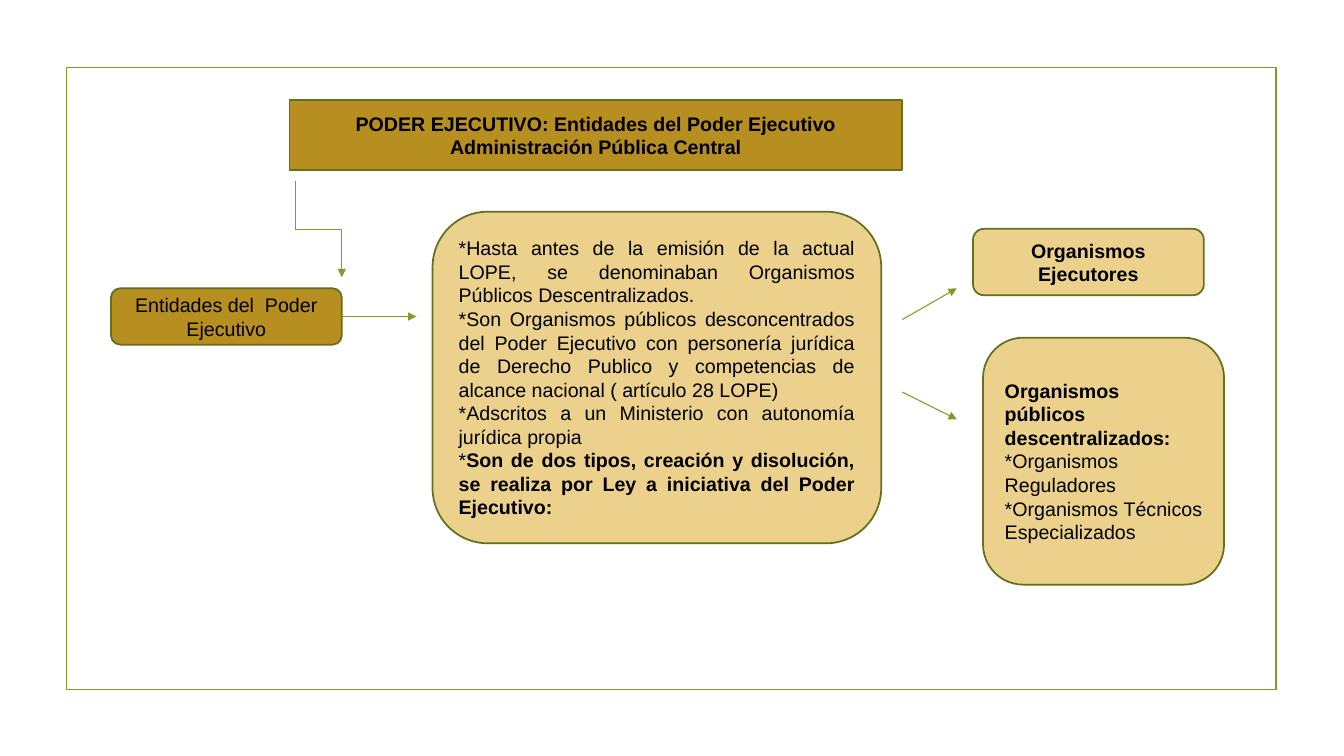
from pptx import Presentation
from pptx.dml.color import RGBColor
from pptx.enum.shapes import MSO_CONNECTOR, MSO_SHAPE
from pptx.enum.text import MSO_ANCHOR, MSO_AUTO_SIZE, PP_ALIGN
from pptx.oxml.ns import qn
from pptx.util import Inches, Pt
from lxml import etree

FRAME_GREEN = RGBColor(0x83, 0x99, 0x2A)
BORDER_GREEN = RGBColor(0x61, 0x71, 0x1F)
GOLD = RGBColor(0xB7, 0x8E, 0x20)
SAND = RGBColor(0xEB, 0xD1, 0x8C)
BLACK = RGBColor(0, 0, 0)
RECTANGLE = MSO_SHAPE.RECTANGLE
ROUNDED = MSO_SHAPE.ROUNDED_RECTANGLE
PROCESS = MSO_SHAPE.FLOWCHART_ALTERNATE_PROCESS
STRAIGHT, ELBOW = MSO_CONNECTOR.STRAIGHT, MSO_CONNECTOR.ELBOW
CENTER, JUSTIFY = PP_ALIGN.CENTER, PP_ALIGN.JUSTIFY
MIDDLE, NO_AUTOFIT = MSO_ANCHOR.MIDDLE, MSO_AUTO_SIZE.NONE
RIGHT_SIDE = 3


class EntityDiagram:
    """Holds the shared style and the slide on which the diagram is drawn."""

    font_format = {"name": "Arial", "size": Pt(14)}
    frame_format = {"word_wrap": True, "auto_size": NO_AUTOFIT, "vertical_anchor": MIDDLE}

    def __init__(self, slide):
        self.slide = slide

    def outline(self, shape, color):
        shape.line.color.rgb = color
        shape.line.width = Pt(1.25)

    def label(self, shape, paragraphs, align):
        text_frame = shape.text_frame
        for key, value in self.frame_format.items():
            setattr(text_frame, key, value)
        for index, runs in enumerate(paragraphs):
            paragraph = text_frame.add_paragraph() if index else text_frame.paragraphs[0]
            paragraph.alignment = align
            for text, bold in runs:
                run = paragraph.add_run()
                run.text = text
                for key, value in {**self.font_format, "bold": bold}.items():
                    setattr(run.font, key, value)
                run.font.color.rgb = BLACK

    def title(self, bounds, text):
        title = self.slide.shapes.title
        for key, value in zip(("left", "top", "width", "height"), bounds):
            setattr(title, key, Inches(value))
        geometry = etree.Element(qn("a:prstGeom"), prst="roundRect")
        etree.SubElement(geometry, qn("a:avLst"))
        title._element.spPr.insert(1, geometry)
        title.fill.solid()
        title.fill.fore_color.rgb = GOLD
        self.outline(title, BORDER_GREEN)
        self.label(title, [[(text, True)]], CENTER)

    def frame(self, bounds):
        frame = self.slide.shapes.add_shape(RECTANGLE, *map(Inches, bounds))
        frame.shadow.inherit = False
        frame.fill.background()
        self.outline(frame, FRAME_GREEN)

    def box(self, kind, bounds, fill, paragraphs, align=CENTER):
        box = self.slide.shapes.add_shape(kind, *map(Inches, bounds))
        box.shadow.inherit = False
        box.fill.solid()
        box.fill.fore_color.rgb = fill
        self.outline(box, BORDER_GREEN)
        self.label(box, paragraphs, align)
        return box

    def arrow(self, start, end, kind=STRAIGHT):
        arrow = self.slide.shapes.add_connector(kind, *map(Inches, start + end))
        arrow.line.color.rgb = FRAME_GREEN
        arrow.line.width = Pt(0.75)
        properties = arrow._element.spPr
        etree.SubElement(properties.find(qn("a:ln")), qn("a:tailEnd"), type="triangle")
        etree.SubElement(properties, qn("a:effectLst"))
        return arrow

    def vertical_elbow(self, start, end):
        center_x, center_y = (start[0] + end[0]) / 2, (start[1] + end[1]) / 2
        half_run, half_drop = (end[0] - start[0]) / 2, (end[1] - start[1]) / 2
        elbow = self.arrow((center_x + half_drop, center_y - half_run),
                           (center_x - half_drop, center_y + half_run), ELBOW)
        elbow._element.spPr.find(qn("a:xfrm")).set("rot", str(270 * 60000))


def main():
    presentation = Presentation()
    presentation.slide_width, presentation.slide_height = Inches(13.33), Inches(7.5)
    diagram = EntityDiagram(presentation.slides.add_slide(presentation.slide_layouts[5]))

    diagram.frame((0.66, 0.67, 12, 6.17))
    diagram.title((2.87, 0.99, 6.08, 0.7),
                  "PODER EJECUTIVO: Entidades del Poder Ejecutivo Administración Pública Central")
    diagram.box(PROCESS, (4.29, 2.1, 4.45, 3.29), SAND, [
        [("*Hasta antes de la emisión de la actual LOPE, se denominaban "
          "Organismos Públicos Descentralizados.", False)],
        [("*Son Organismos públicos desconcentrados del Poder Ejecutivo con personería jurídica "
          "de Derecho Publico y competencias de alcance nacional ( artículo 28 LOPE)", False)],
        [("*Adscritos a un Ministerio con autonomía jurídica propia", False)],
        [("*", False),
         ("Son de dos tipos, creación y disolución, se realiza por Ley a iniciativa "
          "del Poder Ejecutivo:", True)],
    ], JUSTIFY)
    entities = diagram.box(PROCESS, (1.1, 2.86, 2.29, 0.56), GOLD,
                           [[("Entidades del  Poder Ejecutivo", False)]])
    diagram.box(ROUNDED, (9.65, 2.27, 2.29, 0.66), SAND, [[("Organismos Ejecutores", True)]])
    diagram.box(PROCESS, (9.75, 3.35, 2.39, 2.45), SAND, [
        [("Organismos públicos descentralizados:", True)],
        [("*Organismos Reguladores", False)],
        [("*Organismos Técnicos Especializados", False)],
    ], JUSTIFY)

    diagram.vertical_elbow((2.93, 1.8), (3.39, 2.75))
    to_description = diagram.arrow((3.39, 3.14), (4.13, 3.14))
    to_description.begin_connect(entities, RIGHT_SIDE)
    diagram.arrow((8.95, 3.17), (9.49, 2.86))
    diagram.arrow((8.95, 3.89), (9.49, 4.16))

    presentation.save("out.pptx")


if __name__ == "__main__":
    main()
